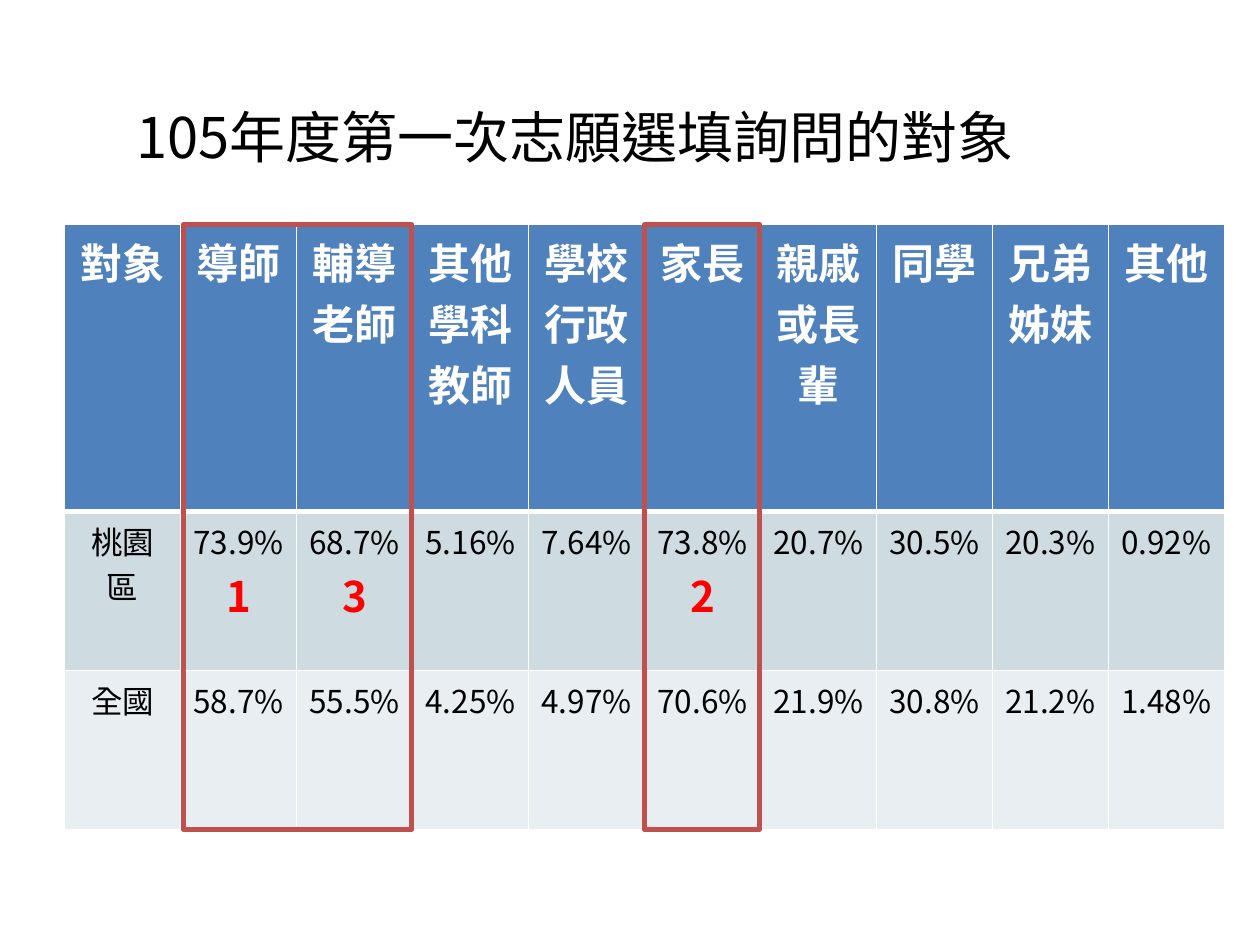
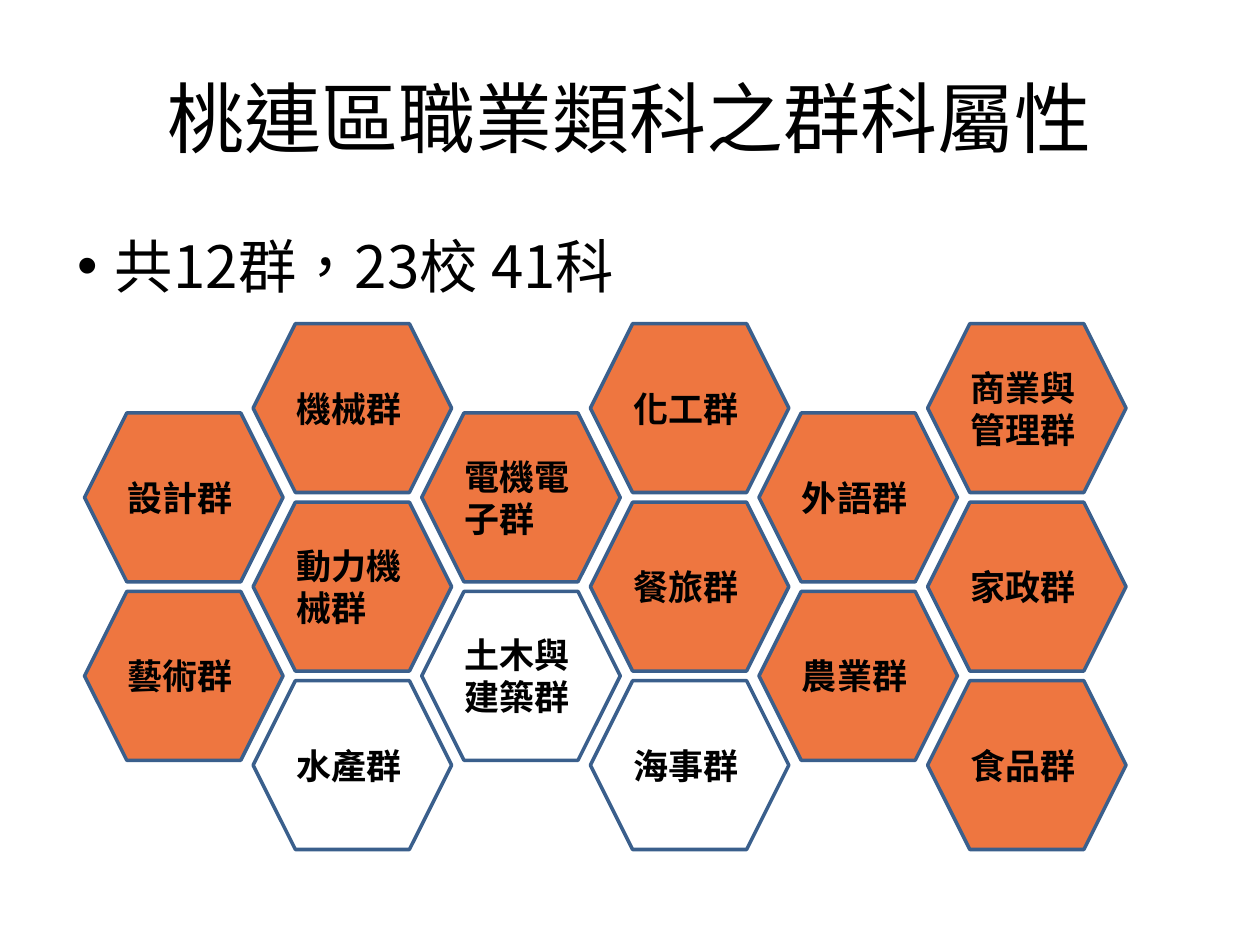
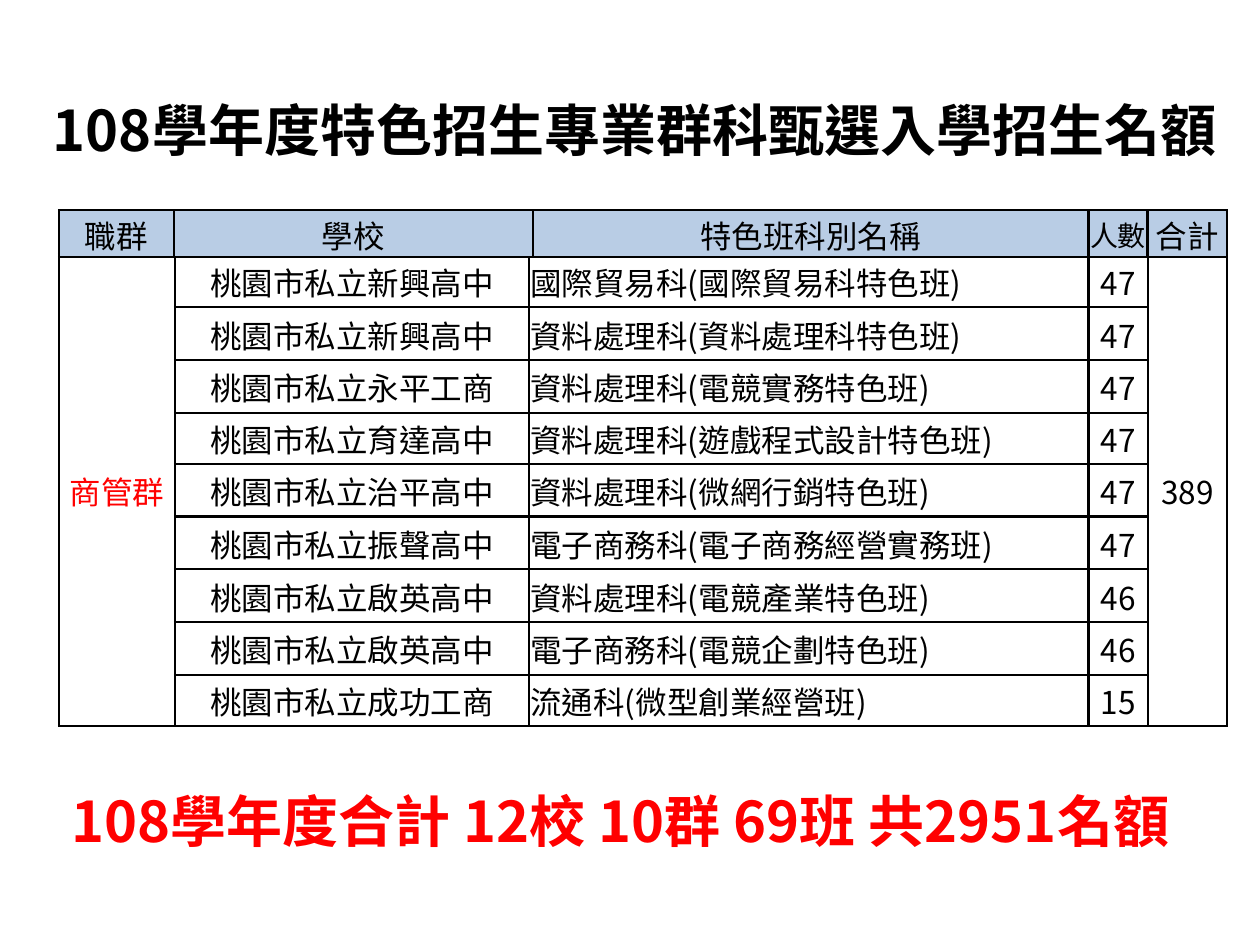
from pptx import Presentation
from pptx.dml.color import RGBColor
from pptx.enum.lang import MSO_LANGUAGE_ID as Language
from pptx.enum.shapes import MSO_SHAPE as Shape
from pptx.enum.text import MSO_ANCHOR as Anchor, MSO_AUTO_SIZE as AutoSize, PP_ALIGN as Align
from pptx.oxml.ns import qn
from pptx.oxml.xmlchemy import OxmlElement
from pptx.util import Pt

COLORS = {
    "black": "000000", "white": "FFFFFF", "red": "FF0000",
    "header": "4F81BD", "band": "CEDCE1", "light band": "E8EEF1",
    "frame": "C0504D", "hexagon": "EE7640", "hexagon edge": "3A5F8C",
    "quota header": "B9CDE5",
}
NOTO = "Noto Sans CJK SC"
CALIBRI = "Calibri"

AUDIENCES = ["對象", "導師", "輔導老師", "其他學科教師", "學校行政人員",
             "家長", "親戚或長輩", "同學", "兄弟姊妹", "其他"]
TAOYUAN = ["桃園區", "73.9%", "68.7%", "5.16%", "7.64%", "73.8%", "20.7%", "30.5%", "20.3%", "0.92%"]
NATIONAL = ["全國", "58.7%", "55.5%", "4.25%", "4.97%", "70.6%", "21.9%", "30.8%", "21.2%", "1.48%"]
RANKS = {1: "1", 2: "3", 5: "2"}

GROUP_COLUMNS = [
    ["設計群", "藝術群"],
    ["機械群", "動力機械群", "水產群"],
    ["電機電子群", "土木與建築群"],
    ["化工群", "餐旅群", "海事群"],
    ["外語群", "農業群"],
    ["商業與管理群", "家政群", "食品群"],
]
UNFILLED_GROUPS = {"水產群", "土木與建築群", "海事群"}

QUOTA_HEADERS = ["職群", "學校", "特色班科別名稱", "人數", "合計"]
QUOTAS = [
    ("新興高中", "國際貿易科(國際貿易科特色班)", 47),
    ("新興高中", "資料處理科(資料處理科特色班)", 47),
    ("永平工商", "資料處理科(電競實務特色班)", 47),
    ("育達高中", "資料處理科(遊戲程式設計特色班)", 47),
    ("治平高中", "資料處理科(微網行銷特色班)", 47),
    ("振聲高中", "電子商務科(電子商務經營實務班)", 47),
    ("啟英高中", "資料處理科(電競產業特色班)", 46),
    ("啟英高中", "電子商務科(電競企劃特色班)", 46),
    ("成功工商", "流通科(微型創業經營班)", 15),
]


def rgb(name):
    return RGBColor.from_string(COLORS[name])


class SlideMaker:
    def __init__(self, deck):
        self.deck = deck
        self.page = None

    def start(self, layout):
        self.page = self.deck.slides.add_slide(self.deck.slide_layouts[layout])

    def add_span(self, para, text, size, color="black", bold=False, font=NOTO, align=Align.LEFT):
        para.alignment = align
        span = para.add_run()
        span.text = text
        span.font.size = Pt(size)
        span.font.bold = bold
        span.font.name = font
        span.font.language_id = Language.TRADITIONAL_CHINESE
        span.font.color.rgb = rgb(color)
        east_asian = OxmlElement("a:ea")
        east_asian.set("typeface", font)
        span._r.get_or_add_rPr().find(qn("a:latin")).addnext(east_asian)

    def place(self, box, left, top, width, height):
        box.left, box.top, box.width, box.height = Pt(left), Pt(top), Pt(width), Pt(height)

    def title(self, text, bounds, size=32, anchor=Anchor.TOP, **style):
        box = self.page.shapes.title
        self.place(box, *bounds)
        frame = box.text_frame
        frame.auto_size = AutoSize.NONE
        frame.vertical_anchor = anchor
        self.add_span(frame.paragraphs[0], text, size, **style)

    def bullet(self, text, bounds, size):
        box = self.page.placeholders[1]
        self.place(box, *bounds)
        box.text_frame.auto_size = AutoSize.NONE
        para = box.text_frame.paragraphs[0]
        properties = para._p.get_or_add_pPr()
        properties.set("marL", str(Pt(21.6)))
        properties.set("indent", str(-Pt(21.6)))
        mark = OxmlElement("a:buChar")
        mark.set("char", "•")
        properties.append(mark)
        para.space_before = Pt(0)
        self.add_span(para, text, size)

    def text(self, text, bounds, size, **style):
        box = self.page.shapes.add_textbox(*map(Pt, bounds))
        box.text_frame.word_wrap = True
        self.add_span(box.text_frame.paragraphs[0], text, size, **style)

    def shape(self, kind, bounds, line, width, fill=None):
        box = self.page.shapes.add_shape(kind, *map(Pt, bounds))
        box.shadow.inherit = False
        if fill:
            box.fill.solid()
            box.fill.fore_color.rgb = rgb(fill)
        else:
            box.fill.background()
        box.line.color.rgb = rgb(line)
        box.line.width = Pt(width)
        return box

    def table(self, left, top, widths, heights):
        frame = self.page.shapes.add_table(
            len(heights), len(widths), Pt(left), Pt(top), Pt(sum(widths)), Pt(sum(heights)))
        table = frame.table
        table.first_row = table.horz_banding = False
        for column, width in zip(table.columns, widths):
            column.width = Pt(width)
        for row, height in zip(table.rows, heights):
            row.height = Pt(height)
        return table

    def cell(self, cell, text, fill, border, widths, size=18, align=Align.CENTER, **style):
        """Fill one cell; widths are the left, right, top and bottom borders."""
        properties = cell._tc.get_or_add_tcPr()
        for side, width in zip("LRTB", widths):
            line = OxmlElement(f"a:ln{side}")
            line.set("w", str(Pt(width)))
            solid = OxmlElement("a:solidFill")
            color = OxmlElement("a:srgbClr")
            color.set("val", COLORS[border])
            solid.append(color)
            line.append(solid)
            properties.append(line)
        cell.fill.solid()
        cell.fill.fore_color.rgb = rgb(fill)
        self.add_span(cell.text_frame.paragraphs[0], text, size, align=align, **style)

    def quota_cell(self, cell, text, fill="white", **style):
        cell.margin_left = cell.margin_right = cell.margin_top = Pt(0.72)
        cell.margin_bottom = Pt(0)
        cell.vertical_anchor = Anchor.MIDDLE
        self.cell(cell, text, fill, "black", [1.5] * 4, **style)


def audience_slide(maker):
    maker.start(5)
    maker.title("105年度第一次志願選填詢問的對象", (70.6, 54.7, 538.6, 46))
    left, top, width, heights = 36.9, 128.3, 66.3, [164, 90.8, 90.8]
    table = maker.table(left, top, [width] * len(AUDIENCES), heights)
    rows = [
        (AUDIENCES, "header", (1, 1, 1, 3), dict(size=24, color="white", bold=True)),
        (TAOYUAN, "band", (1, 1, 3, 1), {}),
        (NATIONAL, "light band", (1, 1, 1, 1), {}),
    ]
    for row, (texts, fill, borders, style) in enumerate(rows):
        for column, text in enumerate(texts):
            maker.cell(table.cell(row, column), text, fill, "white", borders, **style)
    for column, rank in RANKS.items():
        para = table.cell(1, column).text_frame.add_paragraph()
        maker.add_span(para, rank, 24, "red", True, align=Align.CENTER)
    for frame_left, frame_width in ((105, 130.4), (368.5, 65.6)):
        maker.shape(Shape.RECTANGLE, (frame_left, top, frame_width, sum(heights)), "frame", 3)


def groups_slide(maker):
    maker.start(1)
    maker.title("桃連區職業類科之群科屬性", (36, 21.6, 648, 90), 44, Anchor.MIDDLE,
                font=CALIBRI, align=Align.CENTER)
    maker.bullet("共12群，23校 41科", (36.9, 128, 640.6, 45.4), 33.3)
    for column, groups in enumerate(GROUP_COLUMNS):
        for index, group in enumerate(groups):
            half_row = 2 * index + 1 - column % 2
            bounds = (48.3 + 96.35 * column, 185 + 51 * half_row, 113.4, 96.5)
            fill = None if group in UNFILLED_GROUPS else "hexagon"
            box = maker.shape(Shape.HEXAGON, bounds, "hexagon edge", 2, fill)
            box.text_frame.word_wrap = True
            box.text_frame.vertical_anchor = Anchor.MIDDLE
            maker.add_span(box.text_frame.paragraphs[0], group, 20, bold=True, font=CALIBRI)


def quota_slide(maker):
    maker.start(5)
    maker.title("108學年度特色招生專業群科甄選入學招生名額", (23, 51.1, 697.7, 46), bold=True)
    left, top, header_height = 33.8, 120.2, 25.2
    heights = [29 if row in (3, 8) else 30.2 for row in range(len(QUOTAS))]
    table = maker.table(left, top + header_height, [66.3, 202.3, 319.7, 33.8, 45.4], heights)
    for column, text, color in ((0, "商管群", "red"), (4, "389", "black")):
        table.cell(0, column).merge(table.cell(len(QUOTAS) - 1, column))
        maker.quota_cell(table.cell(0, column), text, color=color)
    for row, (school, course, places) in enumerate(QUOTAS):
        maker.quota_cell(table.cell(row, 1), "桃園市私立" + school)
        maker.quota_cell(table.cell(row, 2), course, align=Align.LEFT)
        maker.quota_cell(table.cell(row, 3), str(places))
    header = maker.table(left, top, [65.5, 205.2, 317.5, 33.8, 45.4], [header_height])
    for column, text in enumerate(QUOTA_HEADERS):
        maker.quota_cell(header.cell(0, column), text, "quota header",
                         size=16 if text == "人數" else 18)
    maker.text("108學年度合計 12校 10群 69班 共2951名額", (33.8, 445.7, 686.2, 45.4), 32,
               color="red", bold=True)


def main():
    deck = Presentation()
    deck.slide_width, deck.slide_height = Pt(720), Pt(540)
    maker = SlideMaker(deck)
    audience_slide(maker)
    groups_slide(maker)
    quota_slide(maker)
    deck.save("out.pptx")


if __name__ == "__main__":
    main()
